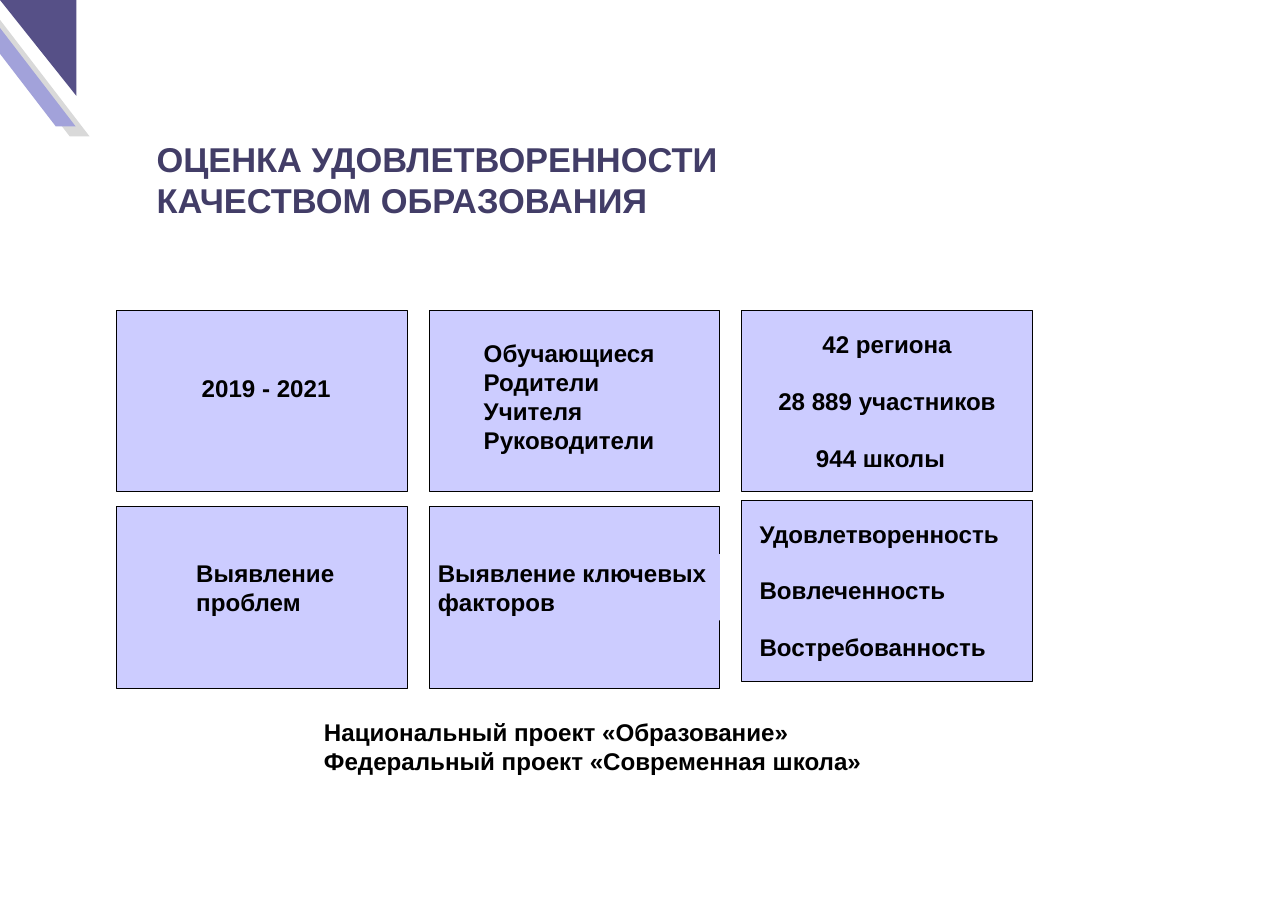
from pptx import Presentation
from pptx.dml.color import RGBColor
from pptx.enum.shapes import MSO_SHAPE
from pptx.enum.text import MSO_ANCHOR, PP_ALIGN
from pptx.util import Inches, Pt

LAVENDER = RGBColor(0xCC, 0xCC, 0xFF)
BLACK = RGBColor(0, 0, 0)
TITLE_PURPLE = RGBColor(0x42, 0x3D, 0x67)
DARK_PURPLE = RGBColor(0x56, 0x50, 0x87)
STRIPE_PURPLE = RGBColor(0xA2, 0xA2, 0xDA)
STRIPE_GRAY = RGBColor(0xD9, 0xD9, 0xD9)

SLIDE_SIZE = (16.53, 11.69)
GRID_LEFT, GRID_TOP = 1.5, 3.98
COLUMN_STEP, ROW_STEP = 4.01, 2.52
CARD_SIZE = (3.73, 2.33)
RAISED_CARD, RAISE = (2, 1), 0.08
BODY = {"name": "Arial", "size": Pt(22.3), "bold": True}
TITLE = {"name": "Arial", "size": Pt(31.8), "bold": True}
LINE_GAP = Pt(25.6)

STRIPES = [((-0.35, 0.13), STRIPE_GRAY), ((-0.53, 0), STRIPE_PURPLE)]
STRIPE_SIZE = (1.5, 1.62)
CORNER = (0, 0, 0.98, 1.23)

TITLE_TEXT = ["ОЦЕНКА УДОВЛЕТВОРЕННОСТИ КАЧЕСТВОМ ОБРАЗОВАНИЯ"]
TITLE_BOX = (2.01, 1.72, 7.64, 1.17)
REACH = ["42 региона", "28 889 участников", "944 школы"]
LABELS = [
    ((6.11, 4.29, 2.72, 1.6), None, 0,
     ["Обучающиеся", "Родители", "Учителя", "Руководители"]),
    ((2.49, 4.74, 1.98, 0.48), None, 0, ["2019 - 2021"]),
    ((5.52, 7.11, 3.72, 0.85), LAVENDER, 0, ["Выявление ключевых", "факторов"]),
    ((2.42, 7.11, 2.05, 0.85), LAVENDER, 0, ["Выявление", "проблем"]),
    ((9.65, 6.61, 3.46, 1.98), LAVENDER, LINE_GAP,
     ["Удовлетворенность", "Вовлеченность", "Востребованность"]),
    ((4.06, 9.16, 7.37, 0.85), None, 0,
     ["Национальный проект «Образование»", "Федеральный проект «Современная школа»"]),
]


def add_preset(slide, preset, box, fill, line=None):
    shape = slide.shapes.add_shape(preset, *map(Inches, box))
    shape.shadow.inherit = False
    shape.fill.solid()
    shape.fill.fore_color.rgb = fill
    if line is None:
        shape.line.fill.background()
    else:
        shape.line.color.rgb = line
        shape.line.width = Pt(1)
    return shape


def write(shape, lines, gap=0, font=BODY, color=BLACK, alignment=PP_ALIGN.LEFT):
    frame = shape.text_frame
    frame.word_wrap = True
    for index, line in enumerate(lines):
        paragraph = frame.add_paragraph() if index else frame.paragraphs[0]
        paragraph.text = line
        paragraph.alignment = alignment
        if index and gap:
            paragraph.space_before = gap
        for key, value in font.items():
            setattr(paragraph.font, key, value)
        paragraph.font.color.rgb = color
    return frame


def add_label(slide, box, fill, gap, lines, **style):
    label = slide.shapes.add_textbox(*map(Inches, box))
    if fill is not None:
        label.fill.solid()
        label.fill.fore_color.rgb = fill
    return write(label, lines, gap, **style)


def add_corner(slide):
    for position, color in STRIPES:
        stripe = add_preset(slide, MSO_SHAPE.PARALLELOGRAM, position + STRIPE_SIZE, color)
        stripe.adjustments[0] = 0.83
        stripe._element.spPr.xfrm.set("flipH", "1")
    add_preset(slide, MSO_SHAPE.RIGHT_TRIANGLE, CORNER, DARK_PURPLE).rotation = 180


def add_cards(slide):
    cards = {}
    for row in range(2):
        for column in range(3):
            left = GRID_LEFT + column * COLUMN_STEP
            top = GRID_TOP + row * ROW_STEP
            if (column, row) == RAISED_CARD:
                top -= RAISE
            cards[column, row] = add_preset(
                slide, MSO_SHAPE.RECTANGLE, (left, top) + CARD_SIZE, LAVENDER, BLACK)
    frame = write(cards[2, 0], REACH, LINE_GAP, alignment=PP_ALIGN.CENTER)
    frame.vertical_anchor = MSO_ANCHOR.MIDDLE
    frame.paragraphs[-1]._p.get_or_add_pPr().set("marR", str(Inches(0.17)))


def main():
    presentation = Presentation()
    presentation.slide_width, presentation.slide_height = map(Inches, SLIDE_SIZE)
    slide = presentation.slides.add_slide(presentation.slide_layouts[6])
    add_corner(slide)
    add_cards(slide)
    for label in LABELS:
        add_label(slide, *label)
    title = add_label(slide, TITLE_BOX, None, 0, TITLE_TEXT, font=TITLE, color=TITLE_PURPLE)
    title.margin_left = 0
    presentation.save("out.pptx")


if __name__ == "__main__":
    main()
